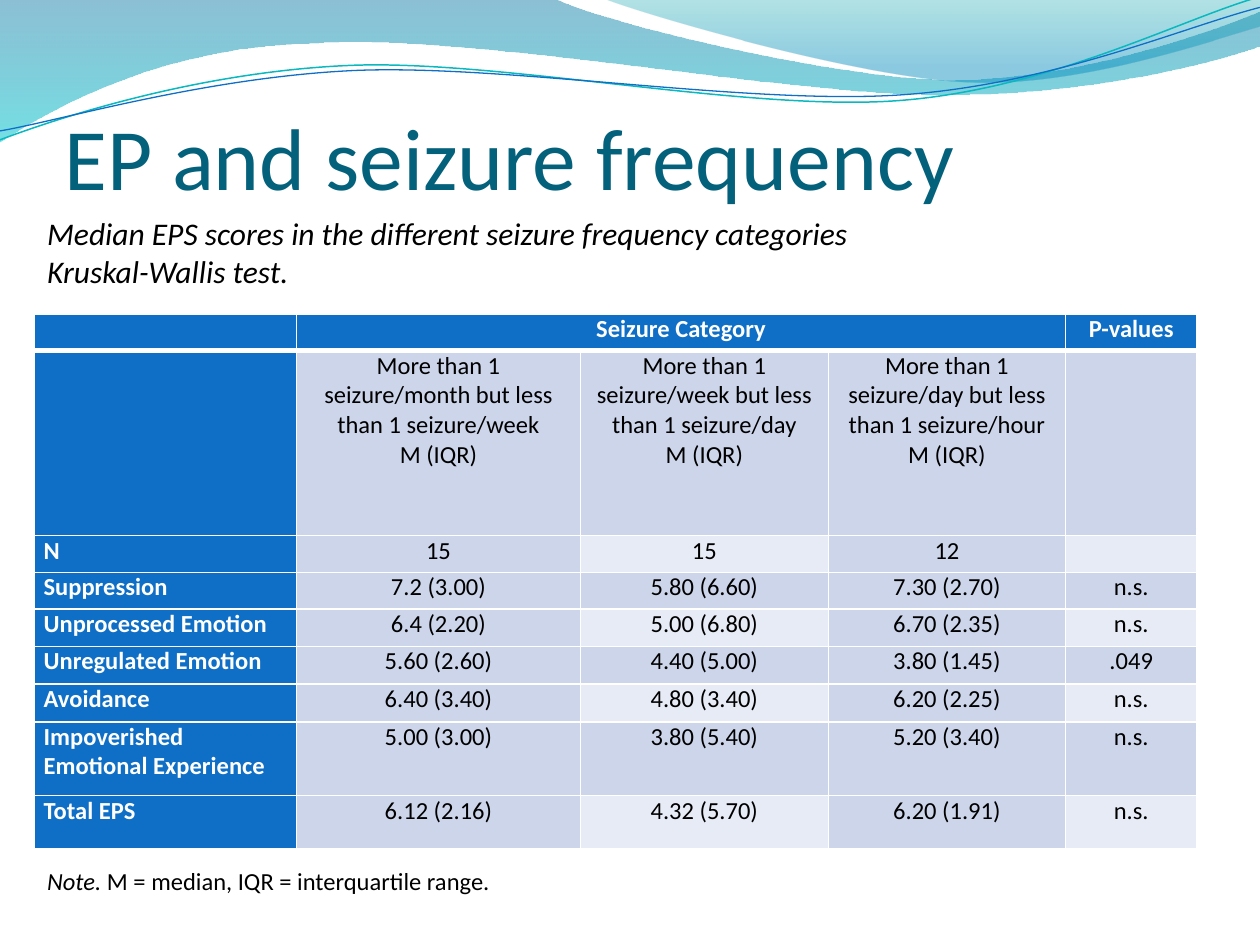
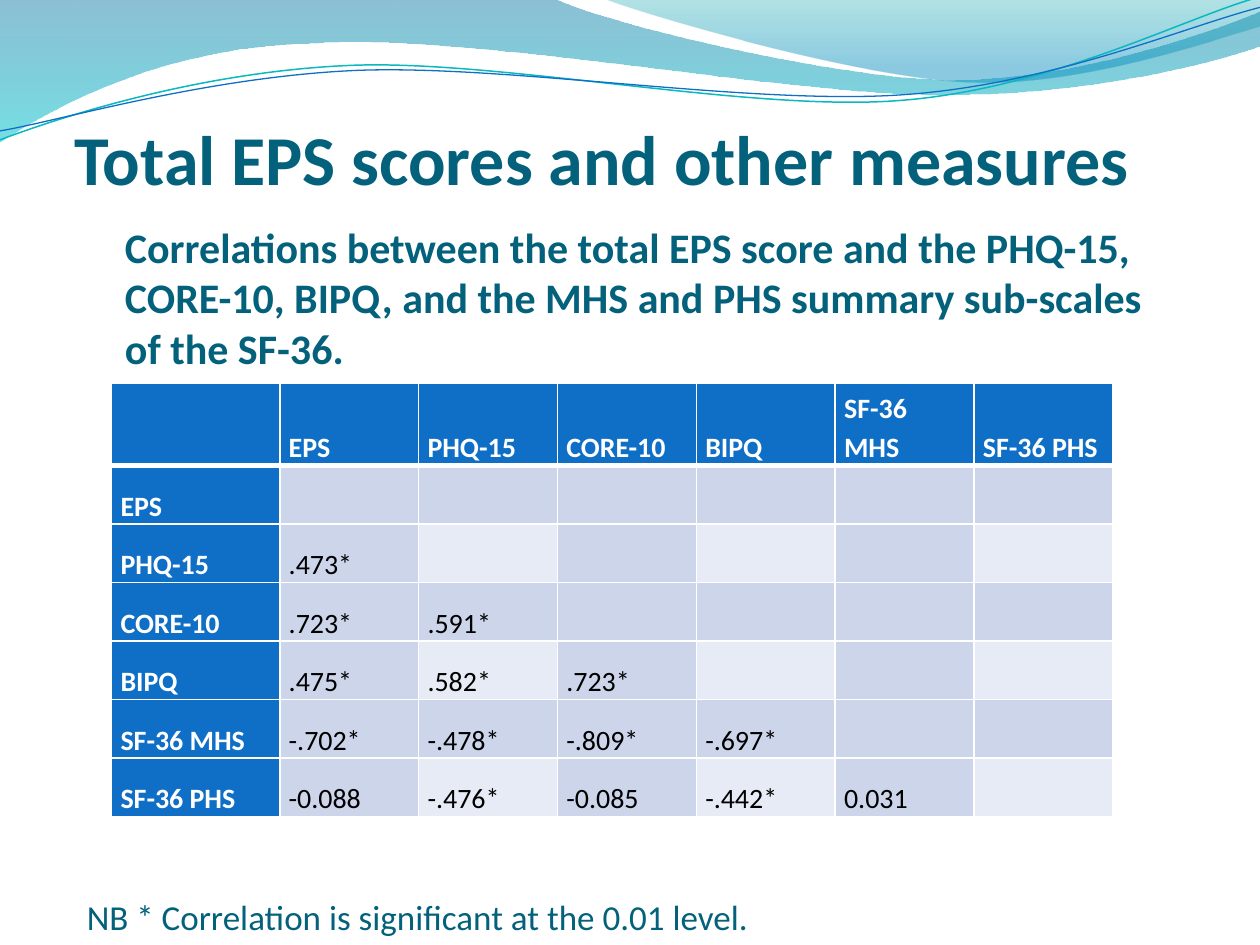
import pptx
import pptx.dml.color
import pptx.enum.text
import pptx.oxml
import pptx.oxml.ns
import pptx.util

Cm, Pt = pptx.util.Cm, pptx.util.Pt
ALIGN = pptx.enum.text.PP_ALIGN
ANCHOR = pptx.enum.text.MSO_ANCHOR
qn = pptx.oxml.ns.qn
XMLNS = pptx.oxml.ns.nsdecls("a")

FONT = "Calibri"
TEAL, BLUE, WHITE, BLACK = "04617B", "0F6FC6", "FFFFFF", "000000"
CELL_DARK, CELL_LIGHT = "CCD5EA", "E7EBF5"

# Outlines in cm: a start point, then steps of one point (line) or three (Bézier curve).
# Gradient stops are (position, colour, opacity in percent).
BANDS = [
    ((0, 0), [
        [(11.18, -0.03)],
        [(12.09, 0.43), (16.87, 1.6), (19.25, 1.6)],
        [(21.67, 1.6), (24.33, 0.66), (25.4, 0.23)],
        [(25.43, 0.91)],
        [(24.97, 1.12), (22.1, 1.93), (18.95, 1.91)],
        [(15.8, 1.91), (9.7, 0.71), (6.53, 0.86)],
        [(3.28, 0.91), (1.17, 2.11), (-0.03, 2.87)],
    ], [(0, "0074A1", 45), (1, "00C6CF", 55)]),
    ((12.17, -0.03), [
        [(12.93, 0.28), (17.32, 1.57), (19.53, 1.65)],
        [(21.74, 1.75), (24.41, 0.81), (25.4, 0.53)],
        [(25.4, 0)],
    ], [(0, "00A1A9", 30), (0.8, "008BBF", 45)]),
]
WAVES = [
    ((0, 2.82), [
        [(1.22, 2.36), (4.01, 1.45), (7.04, 1.32)],
        [(10.03, 1.19), (15.06, 2.26), (18.11, 2.03)],
        [(21.16, 1.8), (23.83, 0.38), (25.35, -0.05)],
    ], "0AB8BF", 0.85),
    ((0, 2.64), [
        [(1.19, 2.44), (4.17, 1.55), (7.19, 1.42)],
        [(10.24, 1.3), (15.16, 2.13), (18.21, 1.91)],
        [(21.23, 1.7), (23.9, 0.53), (25.4, 0.15)],
    ], BLUE, 0.75),
]


def rgb(colour):
    return pptx.dml.color.RGBColor.from_string(colour)


def bend(shape, steps):
    """Turn the straight pieces of a freeform into curves where a step has three points."""
    pieces = list(shape.element.iter(qn("a:lnTo")))
    for piece, step in zip(pieces, steps):
        if len(step) == 3:
            points = "".join(f'<a:pt x="{Cm(x) - shape.left}" y="{Cm(y) - shape.top}"/>'
                             for x, y in step)
            curve = pptx.oxml.parse_xml(f"<a:cubicBezTo {XMLNS}>{points}</a:cubicBezTo>")
            piece.getparent().replace(piece, curve)


def set_borders(cell, top, bottom):
    """Draw white borders, 1 pt at the sides; must come before the cell's fill."""
    properties = cell._tc.get_or_add_tcPr()
    for side, width in (("L", 1), ("R", 1), ("T", top), ("B", bottom)):
        properties.append(pptx.oxml.parse_xml(
            f'<a:ln{side} {XMLNS} w="{Pt(width)}"><a:solidFill>'
            f'<a:srgbClr val="{WHITE}"/></a:solidFill></a:ln{side}>'))


class Deck:
    def __init__(self):
        self.presentation = pptx.Presentation()
        self.presentation.slide_width = Cm(25.4)
        self.presentation.slide_height = Cm(19.05)
        self.start_slide()
        self.decorate_master()

    def start_slide(self):
        self.slide = self.presentation.slides.add_slide(self.presentation.slide_layouts[6])

    def decorate_master(self):
        """Draw the bands and waves on the slide, then move them to the slide master."""
        shapes = [self.band(*band) for band in BANDS] + [self.wave(*wave) for wave in WAVES]
        master_tree = self.presentation.slide_master.shapes.element
        for number, shape in enumerate(shapes, start=101):
            shape.element.nvSpPr.cNvPr.set("id", str(number))
            master_tree.append(shape.element)

    def outline(self, start, steps, close):
        builder = self.slide.shapes.build_freeform(Cm(start[0]), Cm(start[1]))
        ends = [step[-1] for step in steps]
        builder.add_line_segments([(Cm(x), Cm(y)) for x, y in ends], close=close)
        shape = builder.convert_to_shape()
        bend(shape, steps)
        shape.shadow.inherit = False
        return shape

    def band(self, start, steps, stops):
        shape = self.outline(start, steps, close=True)
        shape.line.fill.background()
        shape.fill.gradient()
        shape.fill.gradient_angle = 270
        for stop, (position, colour, _) in zip(shape.fill.gradient_stops, stops):
            stop.position = position
            stop.color.rgb = rgb(colour)
        for colour_node, (_, _, opacity) in zip(shape.element.iter(qn("a:srgbClr")), stops):
            colour_node.append(pptx.oxml.parse_xml(
                f'<a:alpha {XMLNS} val="{opacity * 1000}"/>'))
        return shape

    def wave(self, start, steps, colour, width):
        shape = self.outline(start, steps, close=False)
        shape.fill.background()
        shape.line.color.rgb = rgb(colour)
        shape.line.width = Pt(width)
        return shape

    def style(self, paragraph, size, colour, bold=False, italic=False):
        font = paragraph.font
        font.name, font.size, font.bold, font.italic = FONT, Pt(size), bold, italic
        font.color.rgb = rgb(colour)

    def text(self, box, words, size, colour=BLACK, bold=False, italic=False, anchor=ANCHOR.TOP):
        frame = self.slide.shapes.add_textbox(*map(Cm, box)).text_frame
        frame.word_wrap = True
        frame.vertical_anchor = anchor
        frame.text = words
        for paragraph in frame.paragraphs:
            self.style(paragraph, size, colour, bold, italic)
        return frame

    def title(self, box, words, size, bold=False):
        frame = self.text(box, words, size, TEAL, bold, anchor=ANCHOR.BOTTOM)
        frame.margin_left = frame.margin_right = frame.margin_bottom = 0

    def table(self, corner, widths, heights, rows, size, anchor, align, spacing=None):
        """Add a table with a blue first row and column; align holds for the other cells."""
        box = (*corner, sum(widths), sum(heights))
        table = self.slide.shapes.add_table(len(heights), len(widths), *map(Cm, box)).table
        table.first_row = table.horz_banding = False
        for column, width in zip(table.columns, widths):
            column.width = Cm(width)
        for r, (height, row) in enumerate(zip(heights, rows)):
            table.rows[r].height = Cm(height)
            for c in range(len(widths)):
                cell = table.cell(r, c)
                heading = r == 0 or c == 0
                light = r > 0 and r % 2 == 0 and c % 2 == 0
                set_borders(cell, top=3 if r == 1 else 1, bottom=3 if r == 0 else 1)
                cell.fill.solid()
                cell.fill.fore_color.rgb = rgb(
                    BLUE if heading else CELL_LIGHT if light else CELL_DARK)
                cell.margin_left = cell.margin_right = Cm(0.18)
                cell.margin_top = cell.margin_bottom = 0
                cell.vertical_anchor = anchor
                cell.text = row[c] if c < len(row) else ""
                for paragraph in cell.text_frame.paragraphs:
                    self.style(paragraph, size, WHITE if heading else BLACK, heading)
                    paragraph.alignment = align if c else ALIGN.LEFT
                    paragraph.line_spacing = spacing
        return table


def add_seizure_frequency(deck):
    deck.title((1.3, 1.02, 22.86, 3.18), "EP and seizure frequency", 50)
    periods = [("month", "week"), ("week", "day"), ("day", "hour")]
    rows = [
        ["", "Seizure Category", "", "", "P-values"],
        ["", *(f"More than 1 seizure/{longer} but less than 1 seizure/{shorter}\nM (IQR)"
               for longer, shorter in periods)],
        ["N", "15", "15", "12"],
        ["Suppression", "7.2 (3.00)", "5.80 (6.60)", "7.30 (2.70)", "n.s."],
        ["Unprocessed Emotion", "6.4 (2.20)", "5.00 (6.80)", "6.70 (2.35)", "n.s."],
        ["Unregulated Emotion", "5.60 (2.60)", "4.40 (5.00)", "3.80 (1.45)", ".049"],
        ["Avoidance", "6.40 (3.40)", "4.80 (3.40)", "6.20 (2.25)", "n.s."],
        ["Impoverished Emotional Experience",
         "5.00 (3.00)", "3.80 (5.40)", "5.20 (3.40)", "n.s."],
        ["Total EPS", "6.12 (2.16)", "4.32 (5.70)", "6.20 (1.91)", "n.s."],
    ]
    scores = deck.table((0.7, 6.33), [5.28, 5.72, 5, 4.78, 2.65],
                        [0.74, 3.73, 0.74, 0.74, 0.75, 0.76, 0.76, 1.49, 1.07],
                        rows, 14, ANCHOR.TOP, ALIGN.CENTER)
    scores.cell(0, 1).merge(scores.cell(0, 3))
    note = deck.text((0.7, 17.32, 9.63, 0.86), "Note.", 14, anchor=ANCHOR.MIDDLE).paragraphs[0]
    note.runs[0].font.italic = True
    note.add_run().text = " M = median, IQR = interquartile range."
    deck.text((0.7, 4.19, 19, 1.8),
              "Median EPS scores in the different seizure frequency categories\n"
              "Kruskal-Wallis test.", 18, italic=True)


def add_correlations(deck):
    deck.title((1.5, 1.12, 22.86, 2.9), "Total EPS scores and other measures", 40, bold=True)
    measures = ["EPS", "PHQ-15", "CORE-10", "BIPQ", "SF-36 MHS", "SF-36 PHS"]
    coefficients = [
        [],
        [".473*"],
        [".723*", ".591*"],
        [".475*", ".582*", ".723*"],
        ["-.702*", "-.478*", "-.809*", "-.697*"],
        ["-0.088", "-.476*", "-0.085", "-.442*", "0.031"],
    ]
    rows = [["", *measures]] + [[name, *row] for name, row in zip(measures, coefficients)]
    deck.table((2.25, 7.73), [3.39] + [2.8] * 6, [1.65] + [1.18] * 6,
               rows, 16, ANCHOR.BOTTOM, ALIGN.LEFT, spacing=1.15)
    deck.text((2.27, 4.34, 21.67, 4.06),
              "Correlations between the total EPS score and the PHQ-15, CORE-10, BIPQ, "
              "and the MHS and PHS summary sub-scales of the SF-36.", 24, TEAL, bold=True)
    deck.text((1.5, 17.93, 20.96, 1.12),
              "NB * Correlation is significant at the 0.01 level.", 20, TEAL)


def main():
    deck = Deck()
    add_seizure_frequency(deck)
    deck.start_slide()
    add_correlations(deck)
    deck.presentation.save("out.pptx")


if __name__ == "__main__":
    main()
